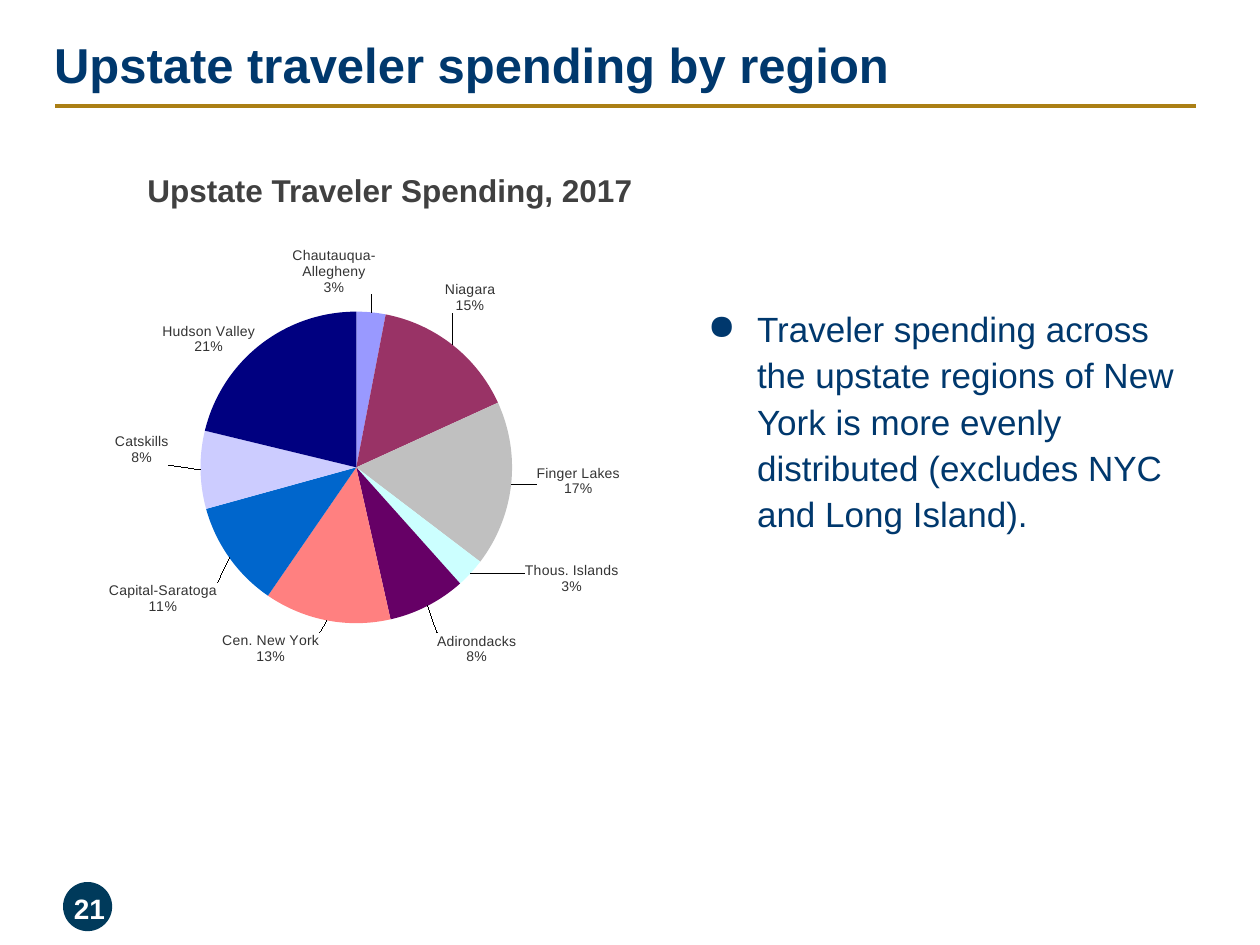
from lxml import etree
from pptx import Presentation
from pptx.chart.data import CategoryChartData
from pptx.dml.color import RGBColor
from pptx.enum.chart import XL_CHART_TYPE, XL_LABEL_POSITION
from pptx.enum.shapes import MSO_CONNECTOR, MSO_SHAPE
from pptx.enum.text import MSO_ANCHOR, PP_ALIGN
from pptx.oxml import parse_xml
from pptx.oxml.ns import nsdecls, qn
from pptx.util import Inches, Pt

PIE = XL_CHART_TYPE.PIE
OUTSIDE_END = XL_LABEL_POSITION.OUTSIDE_END
STRAIGHT = MSO_CONNECTOR.STRAIGHT
OVAL = MSO_SHAPE.OVAL
TOP, MIDDLE = MSO_ANCHOR.TOP, MSO_ANCHOR.MIDDLE
LEFT, CENTER = PP_ALIGN.LEFT, PP_ALIGN.CENTER

HEADLINE = "Upstate traveler spending by region"
TAKEAWAY = ("Traveler spending across the upstate regions of New York is more evenly "
            "distributed (excludes NYC and Long Island).")
CHART_TITLE = "Upstate Traveler Spending, 2017"
PAGE_NUMBER = "21"

# region, share, slice colour, label shift as a fraction of the chart
REGIONS = [
    ("Chautauqua-Allegheny", 3, "9999FF", (-0.13, -0.02)),
    ("Niagara", 15, "993366", (-0.02, -0.05)),
    ("Finger Lakes", 17, "C0C0C0", (0.03, -0.04)),
    ("Thous. Islands", 3, "CCFFFF", (0.08, -0.03)),
    ("Adirondacks", 8, "660066", (0.01, 0.04)),
    ("Cen. New York", 13, "FF8080", (-0.01, 0.01)),
    ("Capital-Saratoga", 11, "0066CC", (-0.01, 0.04)),
    ("Catskills", 8, "CCCCFF", (-0.04, -0.04)),
    ("Hudson Valley", 21, "000080", (0, 0.03)),
]
PIE_AREA = {"x": 0.19, "y": 0.23, "w": 0.51, "h": 0.66}

THEME = {
    "font": "Arial",
    "navy": "00386D", "gold": "AB7F15", "badge": "003A5B",
    "white": "FFFFFF", "heading": "404040", "label": "333333",
    "headline_size": 28, "body_size": 20, "chart_title_size": 18,
    "page_size": 16, "label_size": 8,
}


def rgb(name):
    return RGBColor.from_string(THEME.get(name, name))


def add_text(slide, text, box, size, color, bold=False, align=LEFT, anchor=TOP,
             inset=None, bullet=None, indent=0, line_spacing=None):
    frame = slide.shapes.add_textbox(*map(Inches, box)).text_frame
    frame.word_wrap = True
    frame.vertical_anchor = anchor
    if inset is not None:
        frame.margin_left = frame.margin_right = Inches(inset)
        frame.margin_top = frame.margin_bottom = Inches(inset)
    paragraph = frame.paragraphs[0]
    paragraph.alignment = align
    if line_spacing:
        paragraph.line_spacing = line_spacing
    if bullet:
        properties = paragraph._p.get_or_add_pPr()
        properties.set("marL", str(Inches(indent)))
        properties.set("indent", str(-Inches(indent)))
        etree.SubElement(properties, qn("a:buChar")).set("char", bullet)
    run = paragraph.add_run()
    run.text = text
    run.font.name = THEME["font"]
    run.font.size = Pt(THEME[size])
    run.font.bold = bold
    run.font.color.rgb = rgb(color)


def layout_xml(inner="", **places):
    modes = "".join(f'<c:{axis}Mode val="edge"/>' for axis in "xy") if inner else ""
    values = "".join(f'<c:{key} val="{value}"/>' for key, value in places.items())
    return (f"<c:layout {nsdecls('c')}><c:manualLayout>{inner}{modes}{values}"
            "</c:manualLayout></c:layout>")


def region_label(index, shift):
    return parse_xml(
        f'<c:dLbl {nsdecls("c")}><c:idx val="{index}"/>'
        f'{layout_xml(x=shift[0], y=shift[1])}'
        '<c:numFmt formatCode="0%" sourceLinked="0"/>'
        '<c:dLblPos val="outEnd"/><c:showLegendKey val="0"/><c:showVal val="0"/>'
        '<c:showCatName val="1"/><c:showSerName val="0"/><c:showPercent val="1"/>'
        '<c:showBubbleSize val="0"/><c:separator>\n</c:separator></c:dLbl>')


def style_font(font):
    font.name = THEME["font"]
    font.size = Pt(THEME["label_size"])
    font.color.rgb = rgb("label")


def add_spending_pie(slide, box):
    data = CategoryChartData()
    data.categories = [region for region, *_ in REGIONS]
    data.add_series("Series 1", [share for _, share, *_ in REGIONS])
    chart = slide.shapes.add_chart(PIE, *map(Inches, box), data).chart
    chart.has_legend = False
    chart.has_title = False
    style_font(chart.font)

    plot = chart.plots[0]
    plot.vary_by_categories = True
    series = plot.series[0]
    labels = series.data_labels
    labels.show_category_name = True
    labels.show_percentage = True
    labels.show_value = False
    labels.number_format = "0%"
    labels.number_format_is_linked = False
    labels.position = OUTSIDE_END
    style_font(labels.font)

    for index, (_, _, color, shift) in enumerate(REGIONS):
        fill = series.points[index].format.fill
        fill.solid()
        fill.fore_color.rgb = rgb(color)
        labels._element.insert(index, region_label(index, shift))

    plot_area = chart._chartSpace.chart.plotArea
    for layout in plot_area.findall(qn("c:layout")):
        plot_area.remove(layout)
    inner = '<c:layoutTarget val="inner"/>'
    plot_area.insert(0, parse_xml(layout_xml(inner, **PIE_AREA)))


def add_rule(slide, start, end):
    rule = slide.shapes.add_connector(STRAIGHT, *map(Inches, start + end))
    rule.line.color.rgb = rgb("gold")
    rule.line.width = Pt(2)
    etree.SubElement(rule._element.spPr, qn("a:effectLst"))


def add_badge(slide, box):
    badge = slide.shapes.add_shape(OVAL, *map(Inches, box))
    badge.shadow.inherit = False
    badge.fill.solid()
    badge.fill.fore_color.rgb = rgb("badge")
    badge.line.fill.background()


def main():
    deck = Presentation()
    deck.slide_width, deck.slide_height = Inches(10), Inches(7.5)
    slide = deck.slides.add_slide(deck.slide_layouts[6])

    add_rule(slide, (9.49, 0.84), (0.44, 0.84))
    add_badge(slide, (0.5, 7, 0.39, 0.39))
    add_text(slide, PAGE_NUMBER, (0.42, 7, 0.58, 0.42), "page_size", "white",
             bold=True, align=CENTER, anchor=MIDDLE)
    add_text(slide, HEADLINE, (0.43, 0.25, 9.06, 0.51), "headline_size", "navy",
             bold=True, anchor=MIDDLE, inset=0)
    add_text(slide, TAKEAWAY, (5.52, 2.36, 3.97, 1.1), "body_size", "navy",
             bullet="●", indent=0.39, line_spacing=1.1)
    add_text(slide, CHART_TITLE, (0.51, 1.31, 5.17, 0.4), "chart_title_size", "heading",
             bold=True, align=CENTER, anchor=MIDDLE)
    add_spending_pie(slide, (0.67, 1.42, 4.85, 4.09))

    deck.save("out.pptx")


if __name__ == "__main__":
    main()
